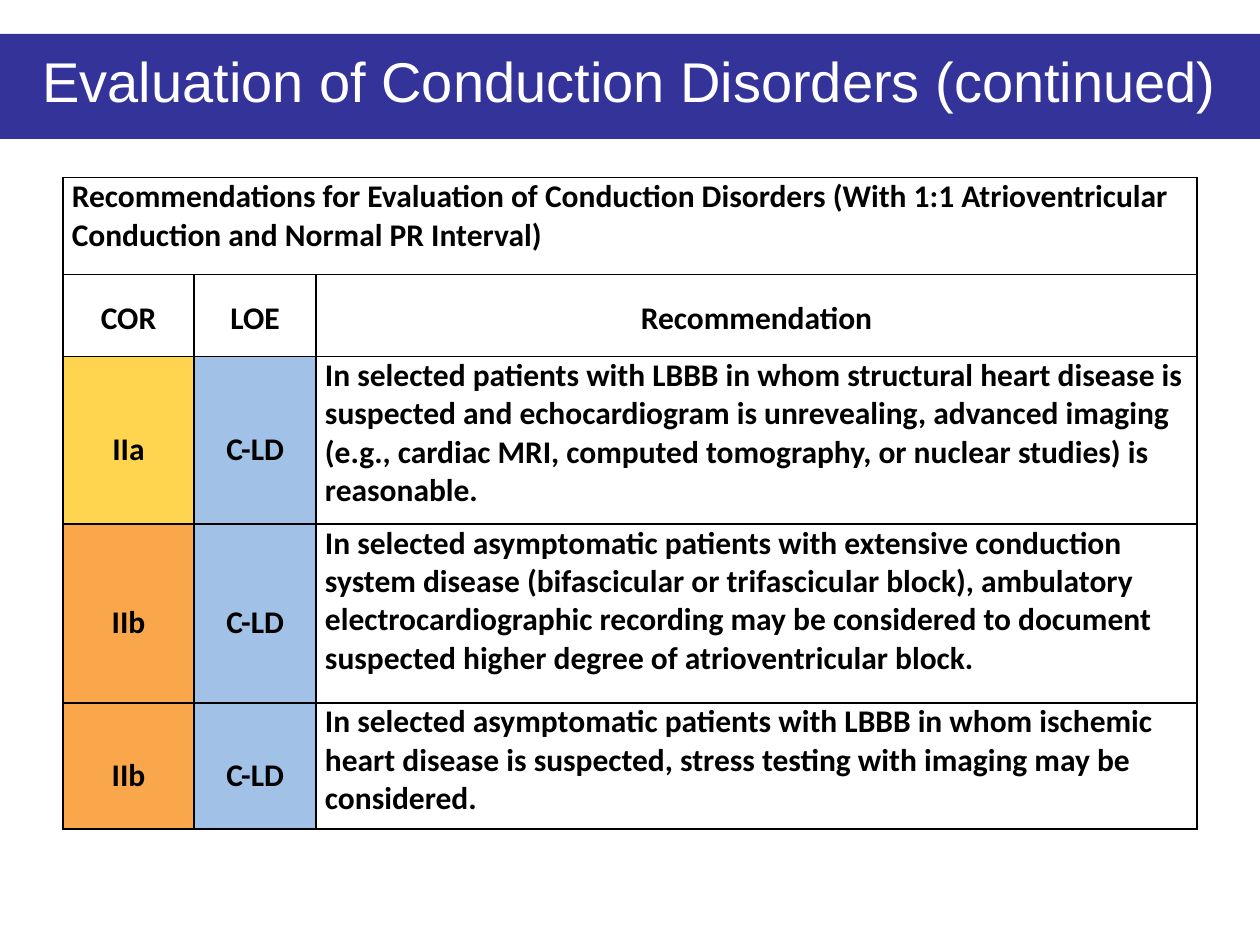
from lxml.etree import SubElement
from pptx import Presentation
from pptx.dml.color import RGBColor
from pptx.enum.text import MSO_ANCHOR as Anchor, MSO_AUTO_SIZE as AutoSize, PP_ALIGN as Align
from pptx.oxml.ns import qn
from pptx.util import Inches, Pt

NAVY = RGBColor(0x33, 0x33, 0x99)
WHITE = RGBColor(0xFF, 0xFF, 0xFF)
BLACK = RGBColor(0x00, 0x00, 0x00)
YELLOW = RGBColor(0xFF, 0xD5, 0x4F)
ORANGE = RGBColor(0xFA, 0xA7, 0x4B)
BLUE = RGBColor(0xA1, 0xC1, 0xE7)

TITLE = "Evaluation of Conduction Disorders (continued)"
CAPTION = (
    "Recommendations for Evaluation of Conduction Disorders "
    "(With 1:1 Atrioventricular Conduction and Normal PR Interval)"
)
HEADINGS = ["COR", "LOE", "Recommendation"]
RECOMMENDATIONS = [
    ("IIa", "C-LD",
     "In selected patients with LBBB in whom structural heart disease is suspected and "
     "echocardiogram is unrevealing, advanced imaging (e.g., cardiac MRI, computed "
     "tomography, or nuclear studies) is reasonable."),
    ("IIb", "C-LD",
     "In selected asymptomatic patients with extensive conduction system disease "
     "(bifascicular or trifascicular block), ambulatory electrocardiographic recording may "
     "be considered to document suspected higher degree of atrioventricular block."),
    ("IIb", "C-LD",
     "In selected asymptomatic patients with LBBB in whom ischemic heart disease is "
     "suspected, stress testing with imaging may be considered."),
]
CLASS_COLORS = {"IIa": YELLOW, "IIb": ORANGE}
COLUMN_WIDTHS = [1.04, 0.97, 6.99]
ROW_HEIGHTS = [0.77, 0.65, 1.33, 1.42, 1]

TITLE_FONT = {"name": "Arial", "size": Pt(32), "bold": False}
CELL_FONT = {"name": "Calibri", "size": Pt(18), "bold": True}
CELL_MARGINS = {
    "margin_left": Inches(0.07), "margin_right": Inches(0.07),
    "margin_top": 0, "margin_bottom": 0,
}
LEFT_TEXT = {"alignment": Align.LEFT, "line_spacing": 1.0}
HEADING_TEXT = {"alignment": Align.CENTER, "line_spacing": 1.15}
RATING_TEXT = {"alignment": Align.CENTER, "line_spacing": 1.5}


def apply_format(target, values):
    """Set each attribute in values on the target."""
    for name, value in values.items():
        setattr(target, name, value)


def write_text(text_frame, text, paragraph_format, font_format, color):
    """Write one formatted paragraph into a text frame."""
    text_frame.text = text
    paragraph = text_frame.paragraphs[0]
    apply_format(paragraph, paragraph_format)
    font = paragraph.runs[0].font
    apply_format(font, font_format)
    font.color.rgb = color


def add_title_bar(slide, left, top, width, height):
    """Turn the title placeholder into a full-width coloured bar."""
    title = slide.shapes.title
    apply_format(title, {"left": left, "top": top, "width": width, "height": height})
    title.fill.solid()
    title.fill.fore_color.rgb = NAVY
    write_text(title.text_frame, TITLE,
               {"alignment": Align.CENTER, "line_spacing": 0.8}, TITLE_FONT, WHITE)
    apply_format(title.text_frame, {
        "word_wrap": True, "auto_size": AutoSize.SHAPE_TO_FIT_TEXT,
        "vertical_anchor": Anchor.MIDDLE,
    })


def set_borders(cell):
    """Draw a thin black line on all four sides of a cell."""
    properties = cell._tc.get_or_add_tcPr()
    for index, side in enumerate(["a:lnL", "a:lnR", "a:lnT", "a:lnB"]):
        line = SubElement(properties, qn(side), w=str(Pt(1)))
        fill = SubElement(line, qn("a:solidFill"))
        SubElement(fill, qn("a:srgbClr"), val=str(BLACK))
        properties.insert(index, line)


def fill_cell(cell, text, paragraph_format, color=None):
    """Write a cell's text, centred vertically unless it is left aligned."""
    write_text(cell.text_frame, text, paragraph_format, CELL_FONT, BLACK)
    if paragraph_format is not LEFT_TEXT:
        cell.vertical_anchor = Anchor.MIDDLE
    if color is not None:
        cell.fill.solid()
        cell.fill.fore_color.rgb = color


def add_recommendation_table(slide, left, top, width, height):
    """Add the table of recommendations with their class and evidence level."""
    table = slide.shapes.add_table(
        len(ROW_HEIGHTS), len(COLUMN_WIDTHS), left, top, width, height).table
    apply_format(table, {"first_row": False, "horz_banding": False})
    for column, column_width in zip(table.columns, COLUMN_WIDTHS):
        column.width = Inches(column_width)
    for row, row_height in zip(table.rows, ROW_HEIGHTS):
        row.height = Inches(row_height)
    for cell in table.iter_cells():
        apply_format(cell, CELL_MARGINS)
        cell.fill.background()
        set_borders(cell)

    table.cell(0, 0).merge(table.cell(0, 2))
    fill_cell(table.cell(0, 0), CAPTION, LEFT_TEXT)
    for column, heading in enumerate(HEADINGS):
        fill_cell(table.cell(1, column), heading, HEADING_TEXT)
    for row, (rating, evidence, advice) in enumerate(RECOMMENDATIONS, start=2):
        fill_cell(table.cell(row, 0), rating, RATING_TEXT, CLASS_COLORS[rating])
        fill_cell(table.cell(row, 1), evidence, RATING_TEXT, BLUE)
        fill_cell(table.cell(row, 2), advice, LEFT_TEXT)


def main():
    """Build and save the presentation."""
    presentation = Presentation()
    apply_format(presentation, {"slide_width": Inches(10), "slide_height": Inches(7.5)})
    slide = presentation.slides.add_slide(presentation.slide_layouts[5])
    add_title_bar(slide, 0, Inches(0.42), Inches(10), Inches(0.53))
    add_recommendation_table(slide, Inches(0.5), Inches(1.41), Inches(9), Inches(5.17))
    presentation.save("out.pptx")


if __name__ == "__main__":
    main()
